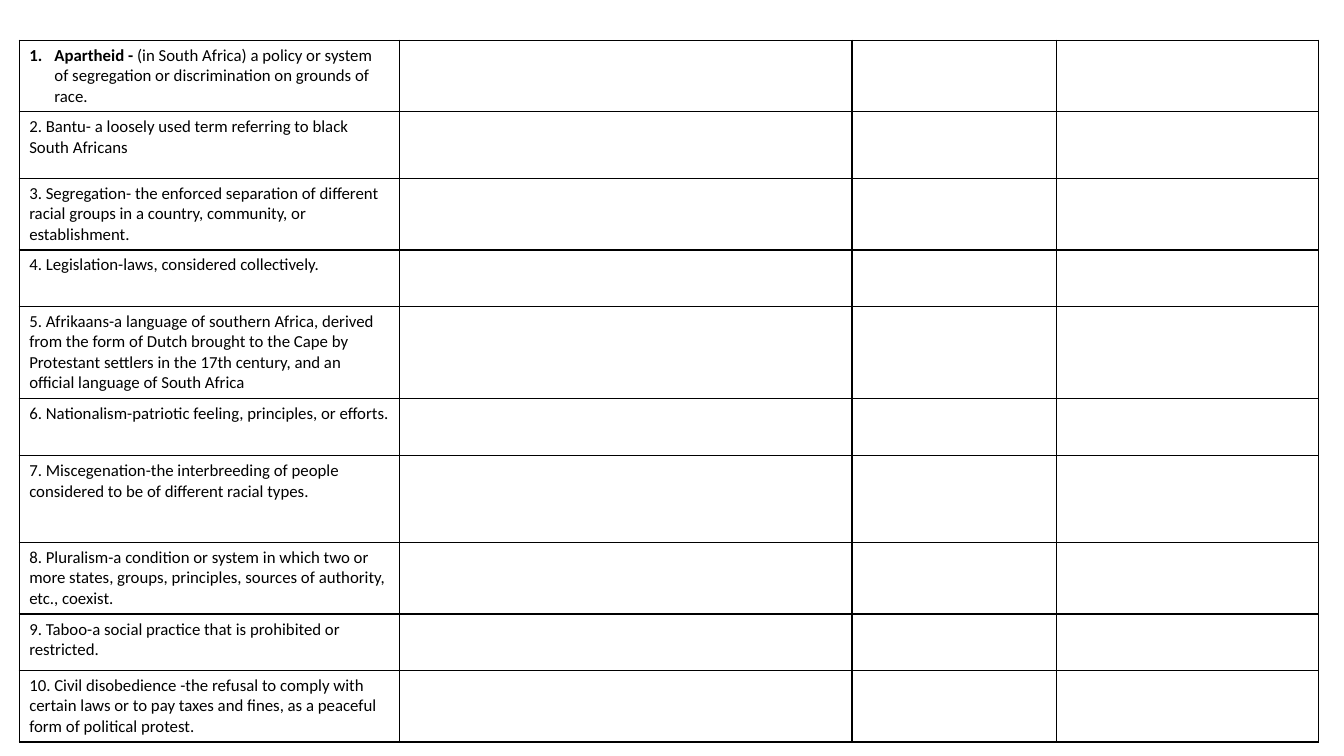
from lxml import etree
from pptx import Presentation
from pptx import util as u
from pptx.dml.color import RGBColor
from pptx.oxml import ns

COLS = [3.77, 4.49, 2.03, 2.6]
FIRST = (
    "Apartheid - ",
    "(in South Africa) a policy or system of segregation or "
    "discrimination on grounds of race.",
)
TERMS = [
    (0.66, "2. Bantu- a loosely used term referring to black South Africans"),
    (0.67, "3. Segregation- the enforced separation of different racial groups "
           "in a country, community, or establishment."),
    (0.56, "4. Legislation-laws, considered collectively."),
    (0.86, "5. Afrikaans-a language of southern Africa, derived from the form of "
           "Dutch brought to the Cape by Protestant settlers in the 17th century, "
           "and an official language of South Africa"),
    (0.57, "6. Nationalism-patriotic feeling, principles, or efforts."),
    (0.86, "7. Miscegenation-the interbreeding of people considered to be of "
           "different racial types."),
    (0.67, "8. Pluralism-a condition or system in which two or more states, "
           "groups, principles, sources of authority, etc., coexist."),
    (0.56, "9. Taboo-a social practice that is prohibited or restricted."),
    (0.56, "10. Civil disobedience -the refusal to comply with certain laws or "
           "to pay taxes and fines, as a peaceful form of political protest."),
]
ROWS = [0.64] + [high for high, _ in TERMS]


def paint(fill, color):
    """Fill with a solid colour given as a hex string."""
    fill.solid()
    fill.fore_color.rgb = RGBColor.from_string(color)


def style(font):
    """Set the font of the definitions."""
    font.name = "Calibri"
    font.size = u.Pt(12)
    paint(font.fill, "000000")


def border(cell, color, width):
    """Draw all four borders of a cell."""
    props = cell._tc.get_or_add_tcPr()
    for spot, side in enumerate(("lnL", "lnR", "lnT", "lnB")):
        line = etree.Element(ns.qn(f"a:{side}"), w=str(u.Pt(width)))
        solid = etree.SubElement(line, ns.qn("a:solidFill"))
        etree.SubElement(solid, ns.qn("a:srgbClr"), val=color)
        props.insert(spot, line)


def number(para, indent):
    """Number a paragraph with a hanging indent."""
    props = para._p.get_or_add_pPr()
    props.set("marL", str(u.Inches(indent)))
    props.set("indent", str(-u.Inches(indent)))
    etree.SubElement(props, ns.qn("a:buFont"), typeface="+mj-lt")
    etree.SubElement(props, ns.qn("a:buAutoNum"), type="arabicPeriod")


def grid(slide, left, top):
    """Add the bordered white table and return it."""
    frame = slide.shapes.add_table(
        len(ROWS), len(COLS), u.Inches(left), u.Inches(top),
        u.Inches(sum(COLS)), u.Inches(sum(ROWS)))
    table = frame.table
    table.first_row = table.horz_banding = False
    for col, wide in zip(table.columns, COLS):
        col.width = u.Inches(wide)
    for row, high in zip(table.rows, ROWS):
        row.height = u.Inches(high)
    for cell in table.iter_cells():
        paint(cell.fill, "FFFFFF")
        border(cell, "000000", 1)
    return table


def lead(cell):
    """Write the numbered first term with its name in bold."""
    cell.margin_right = u.Inches(0.13)
    para = cell.text_frame.paragraphs[0]
    number(para, 0.25)
    for part, bold in zip(FIRST, (True, False)):
        run = para.add_run()
        run.text = part
        style(run.font)
        run.font.bold = bold


def define(cell, words):
    """Write a plain definition."""
    para = cell.text_frame.paragraphs[0]
    run = para.add_run()
    run.text = words
    style(run.font)


def main():
    """Build the slide of terms."""
    deck = Presentation()
    deck.slide_width = u.Inches(13.33)
    deck.slide_height = u.Inches(7.5)
    slide = deck.slides.add_slide(deck.slide_layouts[6])
    table = grid(slide, 0.19, 0.4)
    lead(table.cell(0, 0))
    for row, (_, words) in enumerate(TERMS, 1):
        define(table.cell(row, 0), words)
    deck.save("out.pptx")


if __name__ == "__main__":
    main()
